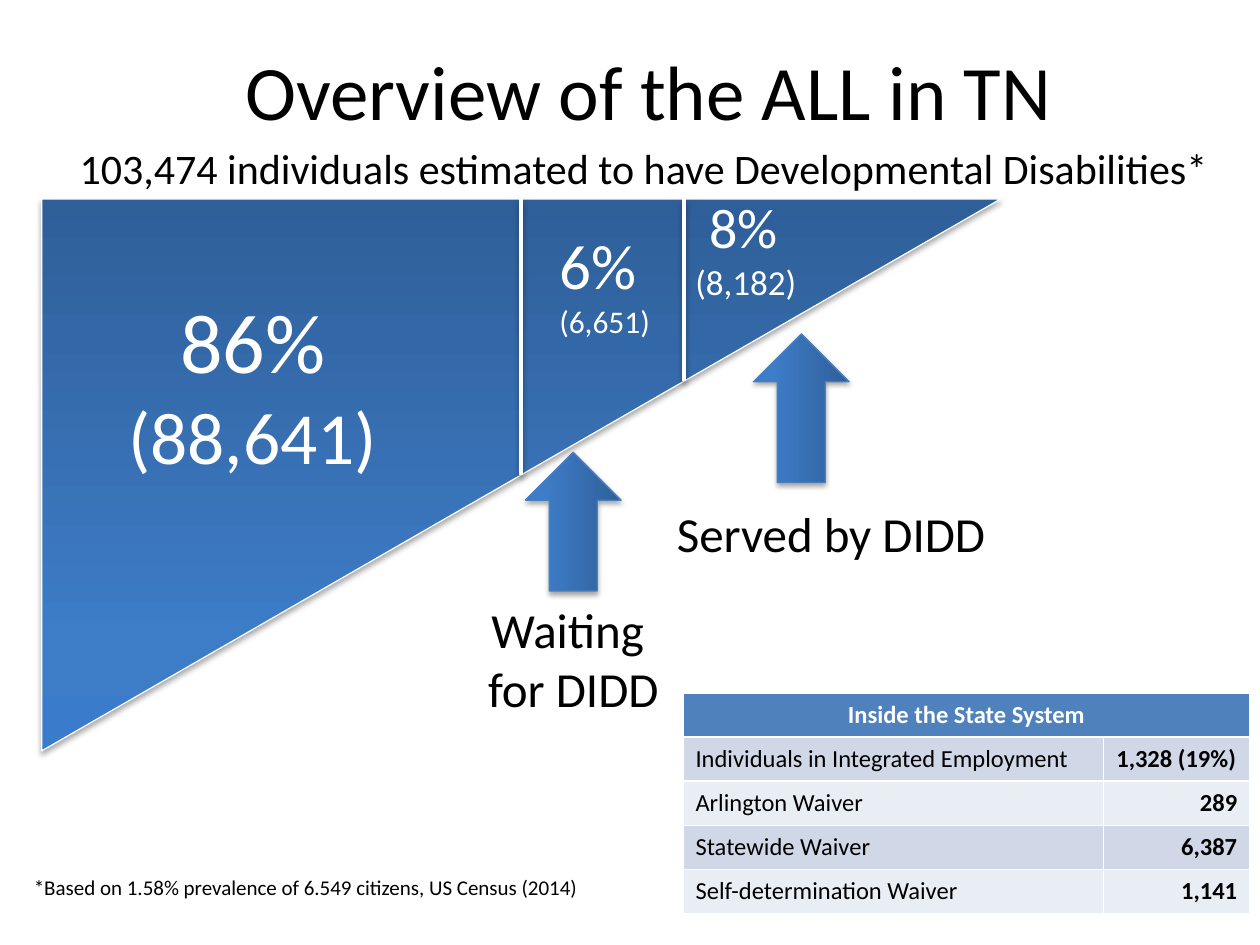
from typing import NamedTuple

from lxml.etree import SubElement
from pptx import Presentation
from pptx.dml.color import RGBColor
from pptx.enum.shapes import MSO_CONNECTOR, MSO_SHAPE
from pptx.enum.text import MSO_ANCHOR, MSO_AUTO_SIZE, PP_ALIGN
from pptx.oxml.ns import qn
from pptx.util import Inches, Pt

COLUMNS, ROWS = 100, 75
CELL = Inches(0.1)
FONT = "Calibri"
BLACK, WHITE = "000000", "FFFFFF"
GRADIENT = ((0, "2F5F99"), (80, "3D7CC7"), (100, "3A7CCB"))
ARROW_LINE, HEADER_FILL = "4B7EBC", "4F81BD"
BAND_FILLS = ("D0D8E8", "E9EDF4")
BREAK = ("\n", None)
TABLE_TITLE = "Inside the State System"
TABLE_ROWS = (
    ("Individuals in Integrated Employment", "1,328 (19%)", PP_ALIGN.LEFT),
    ("Arlington Waiver", "289", PP_ALIGN.RIGHT),
    ("Statewide Waiver", "6,387", PP_ALIGN.RIGHT),
    ("Self-determination Waiver", "1,141", PP_ALIGN.RIGHT),
)


class Box(NamedTuple):
    """A rectangle measured in columns and rows of the slide grid."""

    left: float
    top: float
    width: float
    height: float

    def inner(self, column, row, width, height):
        """Return a box placed relative to this one."""
        return Box(self.left + column, self.top + row, width, height)

    def lengths(self):
        """Return the four sides in slide units."""
        return [round(side * CELL) for side in self]


def color(value):
    """Turn a hex string into a colour."""
    return RGBColor.from_string(value)


def add_span(para, text, size, tint, bold=False):
    """Add one styled run to a paragraph."""
    span = para.add_run()
    span.text = text
    span.font.name = FONT
    span.font.size = Pt(size)
    span.font.bold = bold
    span.font.color.rgb = color(tint)


def add_text(page, box, paras, tint=BLACK, align=PP_ALIGN.CENTER):
    """Add a wrapping text box from lists of (text, size) spans."""
    frame = page.shapes.add_textbox(*box.lengths()).text_frame
    frame.word_wrap = True
    frame.auto_size = MSO_AUTO_SIZE.SHAPE_TO_FIT_TEXT
    for index, spans in enumerate(paras):
        para = frame.add_paragraph() if index else frame.paragraphs[0]
        para.alignment = align
        for span in spans:
            if span == BREAK:
                para.add_line_break()
            else:
                add_span(para, *span, tint)
    return frame


def add_color_element(parent, value):
    """Append a hex colour element and return it."""
    return SubElement(parent, qn("a:srgbClr"), val=value)


def add_shadow(properties, opacity):
    """Append a soft downward shadow to shape properties."""
    effects = SubElement(properties, qn("a:effectLst"))
    shadow = SubElement(effects, qn("a:outerShdw"), blurRad=str(Pt(3.1)),
                        dist=str(Pt(1.8)), dir="5400000", rotWithShape="0")
    SubElement(add_color_element(shadow, BLACK), qn("a:alpha"), val=str(opacity * 1000))


def add_gradient_shape(page, kind, box, rotation, line):
    """Add a shaded, outlined blue shape."""
    shape = page.shapes.add_shape(kind, *box.lengths())
    shape.rotation = rotation
    shape.line.color.rgb = color(line)
    shape.line.width = Pt(0.75)
    properties = shape.element.spPr
    fill = SubElement(properties, qn("a:gradFill"), rotWithShape="1")
    stops = SubElement(fill, qn("a:gsLst"))
    for position, value in GRADIENT:
        stop = SubElement(stops, qn("a:gs"), pos=str(position * 1000))
        add_color_element(stop, value)
    SubElement(fill, qn("a:lin"), ang="16200000", scaled="0")
    properties.insert(2, fill)
    add_shadow(properties, 35)
    return shape


def add_heading(page, box):
    """Place the title and the line below it."""
    title = add_text(page, box.inner(4.7, 0.8, 88.4, 12.6), [[("Overview of the ALL in TN", 44)]])
    title.auto_size = MSO_AUTO_SIZE.NONE
    title.vertical_anchor = MSO_ANCHOR.MIDDLE
    subtitle = "103,474 individuals estimated to have Developmental Disabilities*"
    add_text(page, box.inner(0, 10.8, box.width, 5), [[(subtitle, 24)]])


def add_separator(page, box, share):
    """Draw a vertical line from the top edge of the triangle to its slope."""
    left, top, width, height = box.lengths()
    across = left + round(width * share)
    line = page.shapes.add_connector(MSO_CONNECTOR.STRAIGHT, across, top,
                                     across, top + round(height * (1 - share)))
    line.line.color.rgb = color(WHITE)
    line.line.width = Pt(2)
    add_shadow(line.element.spPr, 38)


def add_triangle(page, box):
    """Place the divided triangle with its three shares."""
    triangle = add_gradient_shape(page, MSO_SHAPE.RIGHT_TRIANGLE, box, 180, WHITE)
    triangle.element.spPr.xfrm.set("flipH", "1")
    for share in (0.5, 0.67):
        add_separator(page, box, share)
    add_text(page, box.inner(1.8, 6.7, 29.9, 16.2), [[("86%", 48)], [("(88,641)", 42)]], WHITE)
    add_text(page, box.inner(40.1, 1.7, 10.1, 10.4),
             [[("6%", 36), BREAK, ("(6,651)", 18)]], WHITE, PP_ALIGN.LEFT)
    add_text(page, box.inner(50.9, -1.6, 11.8, 10.4),
             [[(" ", 36), ("8%", 32)], [("(8,182)", 20)]], WHITE, PP_ALIGN.LEFT)


def add_callout(page, arrow_box, label_box, spans):
    """Fill a box with an upward arrow and set its label in another."""
    width, height = arrow_box.width, arrow_box.height
    turned = arrow_box.inner((width - height) / 2, (height - width) / 2, height, width)
    add_gradient_shape(page, MSO_SHAPE.RIGHT_ARROW, turned, 270, ARROW_LINE)
    add_text(page, label_box, [spans])


def fill_cell(cell, text, fill, align, tint=BLACK, bold=False):
    """Write and shade one table cell."""
    cell.fill.solid()
    cell.fill.fore_color.rgb = color(fill)
    cell.vertical_anchor = MSO_ANCHOR.MIDDLE
    para = cell.text_frame.paragraphs[0]
    para.alignment = align
    add_span(para, text, 14, tint, bold)


def add_state_table(page, box):
    """Place the table with a merged header and banded rows."""
    table = page.shapes.add_table(len(TABLE_ROWS) + 1, 2, *box.lengths()).table
    label_width = 33.4
    for column, width in zip(table.columns, (label_width, box.width - label_width)):
        column.width = round(width * CELL)
    header = table.cell(0, 0)
    header.merge(table.cell(0, 1))
    fill_cell(header, TABLE_TITLE, HEADER_FILL, PP_ALIGN.CENTER, WHITE, True)
    for row, (label, value, align) in enumerate(TABLE_ROWS, 1):
        fill = BAND_FILLS[(row - 1) % 2]
        fill_cell(table.cell(row, 0), label, fill, PP_ALIGN.LEFT)
        fill_cell(table.cell(row, 1), value, fill, align, bold=True)


def add_footnote(page, box):
    """Place the note on the estimate."""
    note = "*Based on 1.58% prevalence of 6.549 citizens, US Census (2014)"
    add_text(page, box, [[(note, 12)]], align=PP_ALIGN.LEFT)


def main():
    """Build the slide and save it."""
    deck = Presentation()
    deck.slide_width, deck.slide_height = COLUMNS * CELL, ROWS * CELL
    page = deck.slides.add_slide(deck.slide_layouts[6])
    add_triangle(page, Box(3.3, 15.8, 76.1, 43.8))
    add_callout(page, Box(59.8, 26.5, 7.6, 11.8), Box(50.5, 39.5, 30.9, 5.7),
                [("Served by DIDD", 28)])
    add_callout(page, Box(41.7, 35.9, 7.6, 11), Box(29.1, 47.1, 32.8, 10.4),
                [("Waiting ", 28), BREAK, ("for DIDD", 28)])
    add_footnote(page, Box(1.7, 68.9, 84.1, 3))
    add_heading(page, Box(2.6, 0, 97, 15.8))
    add_state_table(page, Box(54.2, 55, 45, 17.5))
    deck.save("out.pptx")


if __name__ == "__main__":
    main()
